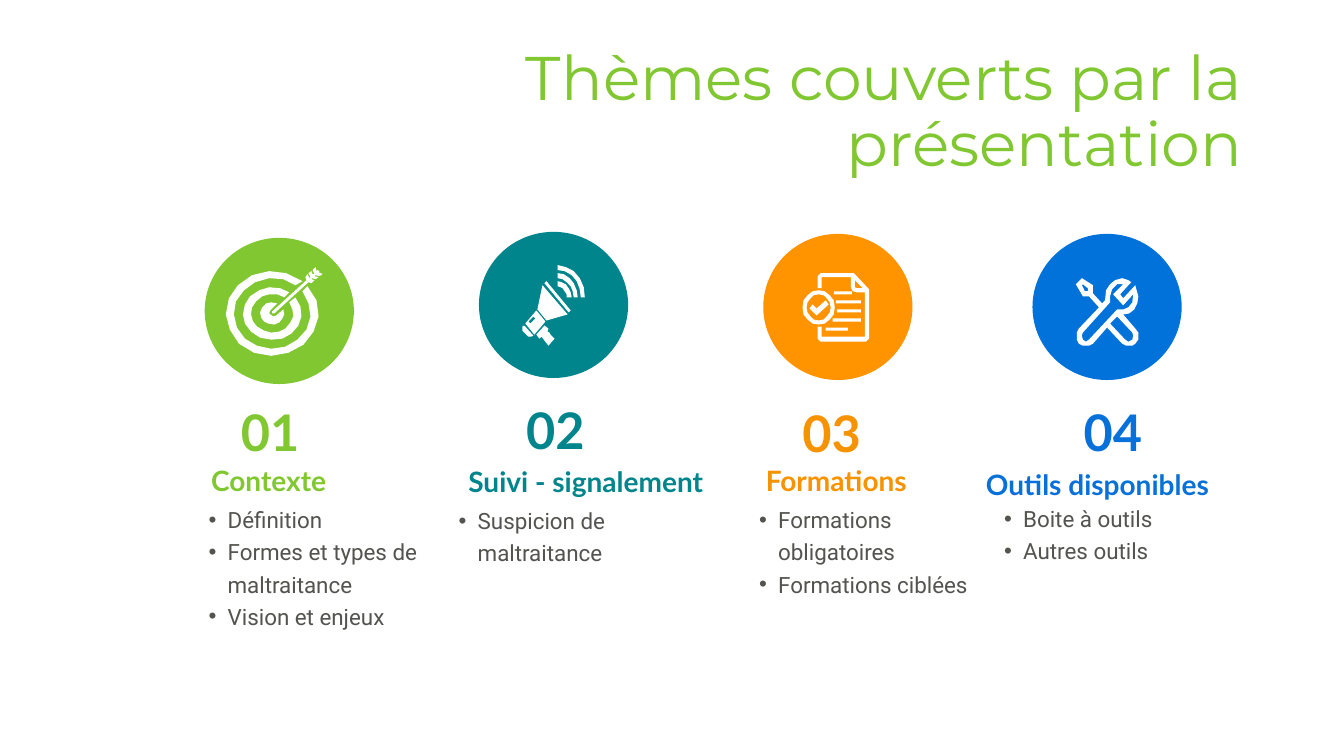
import math

from lxml import etree
from pptx import Presentation
from pptx.dml.color import RGBColor
from pptx.enum.shapes import MSO_SHAPE
from pptx.enum.text import MSO_ANCHOR, MSO_AUTO_SIZE, PP_ALIGN
from pptx.oxml.ns import qn
from pptx.util import Pt

PX = 9144  # EMU per px, 100 px to the inch
OVAL = MSO_SHAPE.OVAL
LEFT, CENTER, RIGHT = PP_ALIGN.LEFT, PP_ALIGN.CENTER, PP_ALIGN.RIGHT
TOP, MIDDLE = MSO_ANCHOR.TOP, MSO_ANCHOR.MIDDLE
GROW, FIXED = MSO_AUTO_SIZE.SHAPE_TO_FIT_TEXT, MSO_AUTO_SIZE.NONE

COLORS = {
    "white": "FFFFFF", "body": "535350",
    "green": "81C731", "teal": "00858C",
    "orange": "FF9300", "orange text": "F79200",
    "blue": "0072DA", "blue text": "0871D9",
}
TITLE = {"name": "Montserrat", "size": Pt(44)}
NUMBER = {"name": "Lato", "size": Pt(36), "bold": True}
HEADING = {"name": "Lato", "size": Pt(20), "bold": True}
BODY = {"name": "Roboto", "size": Pt(16)}

prs = Presentation()
prs.slide_width, prs.slide_height = 1333 * PX, 750 * PX
s = prs.slides.add_slide(prs.slide_layouts[6])


def arc(cx, cy, rx, ry, start, stop, steps):
    """Points on an ellipse; angles in degrees, clockwise from the right."""
    angles = [math.radians(start + (stop - start) * i / steps) for i in range(steps + 1)]
    return [(cx + rx * math.cos(a), cy + ry * math.sin(a)) for a in angles]


def write(box, lines, font, color, align=LEFT, spacing=1.2, anchor=TOP, size=GROW,
          bullet=False):
    tf = s.shapes.add_textbox(*(v * PX for v in box)).text_frame
    tf.word_wrap, tf.auto_size, tf.vertical_anchor = True, size, anchor
    for i, line in enumerate(lines):
        p = tf.add_paragraph() if i else tf.paragraphs[0]
        p.alignment, p.line_spacing = align, spacing
        if bullet:
            pPr = p._p.get_or_add_pPr()
            pPr.set("marL", str(19 * PX))
            pPr.set("indent", str(-19 * PX))
            etree.SubElement(pPr, qn("a:buFont")).set("typeface", "Arial")
            etree.SubElement(pPr, qn("a:buChar")).set("char", "•")
        r = p.add_run()
        r.text = line
        for key, value in font.items():
            setattr(r.font, key, value)
        r.font.color.rgb = RGBColor.from_string(COLORS[color])


# Target: rings (rx, ry, half the gap angle) open toward the arrow at -45 degrees
target = [[
    (320, 272), (317, 274), (313, 273), (312, 274), (316, 275), (313, 277), (310, 276),
    (309, 277), (312, 278), (309, 281), (306, 280), (272, 311), (270, 311), (270, 309),
    (304, 278), (303, 275), (305, 272), (307, 276), (308, 275), (306, 271), (309, 269),
    (310, 272), (312, 272), (310, 268), (313, 265), (314, 269), (315, 268), (317, 269),
    (316, 270)]]
for outer, inner in [((46, 42, 5), (38, 35, 7)), ((29, 26, 8), (21, 19, 11))]:
    edges = [arc(270, 311, rx, ry, gap - 45, 315 - gap, 16) for rx, ry, gap in (outer, inner)]
    target.append(edges[0] + edges[1][::-1])
target.append(arc(270, 311, 12, 11, -23, 293, 12)
              + [(268, 308), (267, 311), (271, 314), (274, 313)])

megaphone = [
    [(518, 324), (520, 323), (529, 333), (527, 334), (524, 334), (518, 328)],
    [(541, 319), (530, 332), (521, 321), (532, 308)],
    [(531, 316), (529, 314), (524, 319), (526, 321)],
    [(540, 281), (564, 310), (566, 308), (542, 279)],
    [(533, 307), (542, 318), (563, 312), (538, 283)],
    [(549, 335), (546, 332), (545, 330), (543, 329), (544, 326), (540, 323),
     (532, 332), (535, 336), (537, 334), (544, 343), (550, 336)],
]
for outer, inner in [((14, 16), (9, 11)), ((20, 24), (16, 19)), ((27, 32), (23, 27))]:
    megaphone.append(arc(553, 295, *outer, -90, 0, 5) + arc(553, 295, *inner, 0, -90, 5))

document = [
    [(862, 287), (862, 336), (859, 339), (814, 339), (811, 336), (811, 324), (815, 324),
     (815, 334), (858, 334), (858, 290), (850, 290), (846, 289), (844, 285), (844, 275),
     (815, 275), (815, 286), (811, 286), (811, 274), (814, 271), (847, 271)],
    [(856, 286), (848, 278), (848, 285), (850, 286)],
    [(822, 302), (810, 313), (803, 306), (806, 302), (810, 306), (819, 298)],
    arc(812, 305, 16, 17, 0, 360, 16),
    arc(812, 305, 12, 13, 0, 360, 16),
]
for i, (x1, x2) in enumerate([(827, 845), (829, 854), (830, 854), (826, 854), (819, 841)]):
    y = 289 + 9 * i
    document.append([(x1, y), (x2, y), (x2, y + 3), (x1, y + 3)])

tools = [
    [(1114, 312), (1120, 311), (1125, 307), (1128, 301), (1129, 294), (1127, 287),
     (1126, 283), (1114, 296), (1111, 292), (1122, 280), (1119, 278), (1113, 276),
     (1106, 278), (1101, 282), (1097, 288), (1096, 298), (1093, 301), (1084, 291),
     (1084, 283), (1073, 276), (1067, 282), (1074, 294), (1080, 294), (1090, 305),
     (1070, 326), (1068, 330), (1068, 337), (1070, 341), (1074, 343), (1080, 343),
     (1084, 341), (1098, 325), (1113, 341), (1117, 343), (1123, 343), (1126, 341),
     (1129, 337), (1129, 330), (1126, 326)],
    [(1076, 289), (1073, 283), (1074, 282), (1079, 286), (1079, 289)],
    [(1080, 337), (1077, 339), (1074, 337), (1073, 333), (1074, 330), (1101, 300),
     (1101, 294), (1103, 287), (1108, 282), (1114, 282), (1104, 292), (1114, 303),
     (1124, 292), (1123, 300), (1119, 305), (1114, 307), (1108, 307)],
    [(1123, 337), (1119, 339), (1116, 337), (1101, 321), (1108, 314),
     (1123, 330), (1124, 333)],
]

write((194, 40, 1048, 145), ["Thèmes couverts par la présentation"], TITLE, "green",
      RIGHT, 0.9, MIDDLE, FIXED)

badges = [("green", 203, 236, target), ("orange", 757, 232, document),
          ("blue", 1024, 232, tools), ("teal", 475, 230, megaphone)]
for color, x, y, contours in badges:
    circle = s.shapes.add_shape(OVAL, x * PX, y * PX, 148 * PX, 145 * PX)
    builder = s.shapes.build_freeform(*contours[0][0], scale=PX)
    for i, points in enumerate(contours):
        if i:
            builder.move_to(*points[0])
        builder.add_line_segments(points[1:], close=True)
    icon = builder.convert_to_shape()
    for sp, fill in [(circle, color), (icon, "white")]:
        sp.shadow.inherit = False
        sp.fill.solid()
        sp.fill.fore_color.rgb = RGBColor.from_string(COLORS[fill])
        sp.line.fill.background()

# Topics: text colour, then box and wording of heading, bullets and number
topics = [
    ("green", (153, 448, 227, 47), "Contexte", (197, 492, 227, 136),
     ["Définition", "Formes et types de maltraitance", "Vision et enjeux"],
     (229, 381, 86, 76), "01"),
    ("orange text", (716, 448, 227, 47), "Formations", (743, 492, 243, 104),
     ["Formations obligatoires", "Formations ciblées"], (786, 382, 86, 76), "03"),
    ("blue text", (956, 452, 265, 47), "Outils disponibles", (986, 491, 203, 72),
     ["Boite à outils", "Autres outils"], (1065, 381, 86, 76), "04"),
    ("teal", (409, 449, 344, 47), "Suivi - signalement", (445, 493, 273, 72),
     ["Suspicion de maltraitance"], (512, 379, 86, 76), "02"),
]
for color, head_box, head, body_box, points, num_box, num in topics:
    write(head_box, [head], HEADING, color, CENTER)
    write(body_box, points, BODY, "body", bullet=True)
    write(num_box, [num], NUMBER, color)

prs.save("out.pptx")
